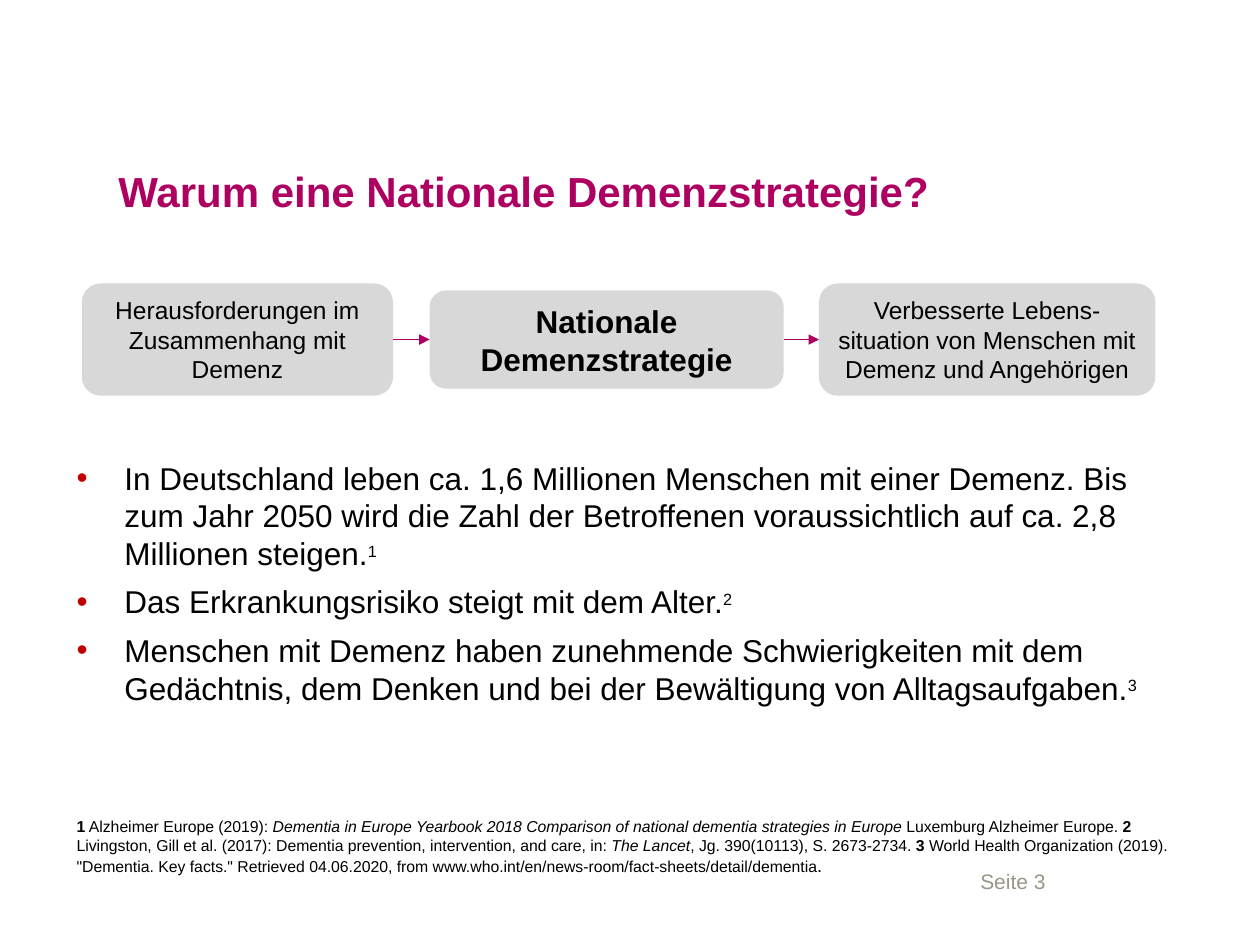
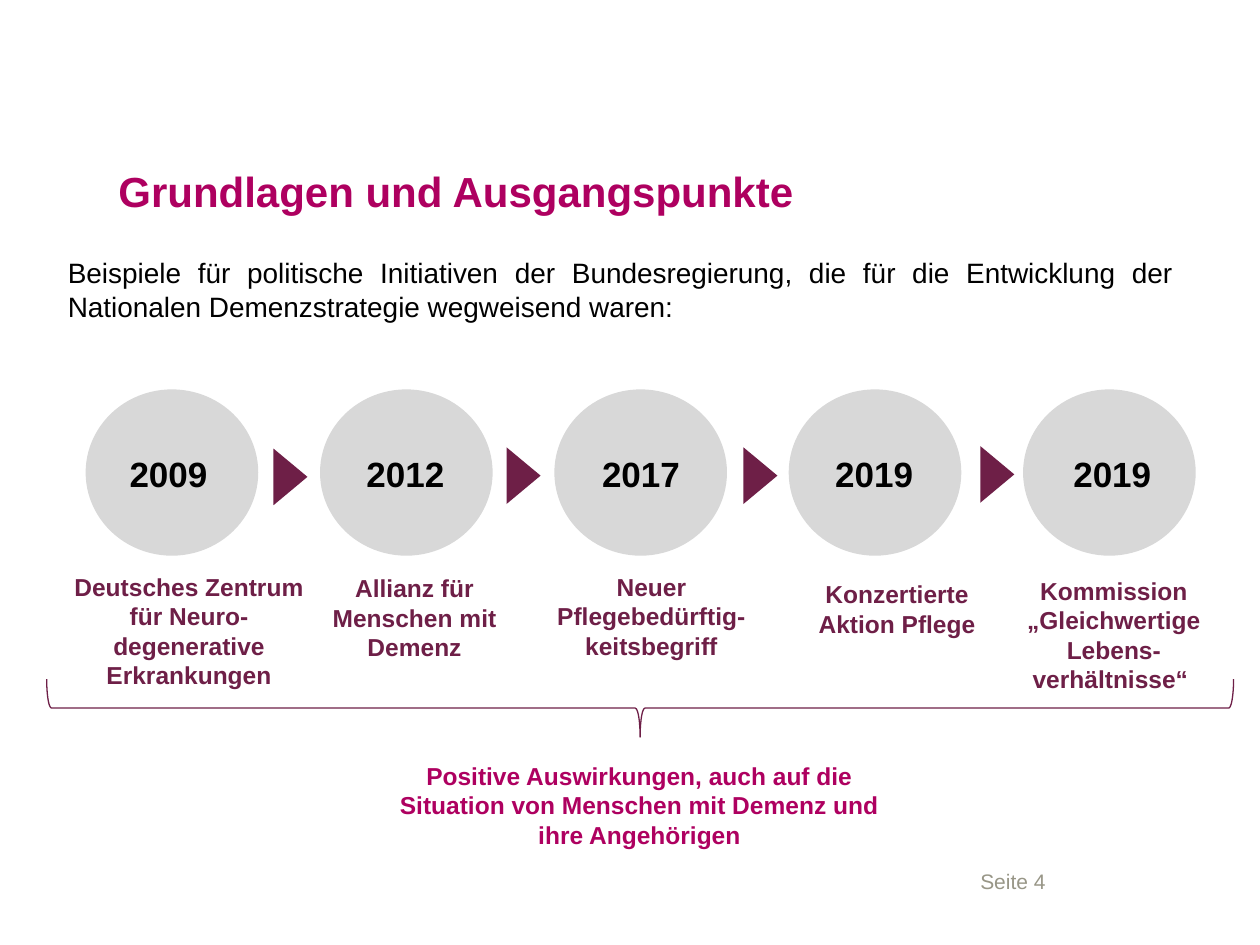
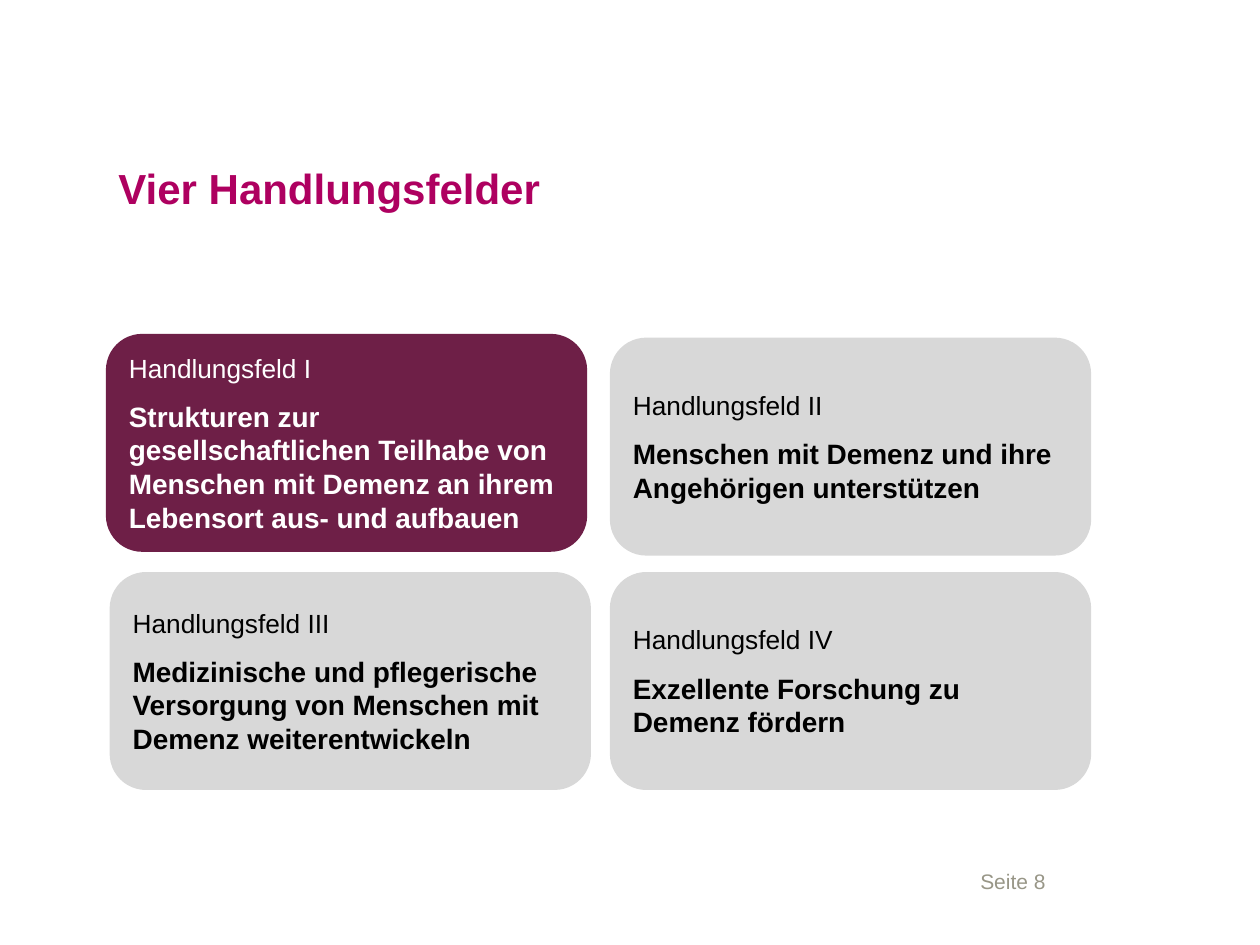
"""Builds three slides about the national dementia strategy."""
import itertools
from typing import NamedTuple

import lxml.etree
import pptx
import pptx.dml.color
import pptx.enum.shapes
import pptx.enum.text
import pptx.oxml.ns
import pptx.util

RGBColor = pptx.dml.color.RGBColor
Inches = pptx.util.Inches
Pt = pptx.util.Pt
ShapeType = pptx.enum.shapes.MSO_SHAPE
Align = pptx.enum.text.PP_ALIGN
Anchor = pptx.enum.text.MSO_ANCHOR

MAGENTA = RGBColor(0xAE, 0x00, 0x60)
PLUM = RGBColor(0x6E, 0x1F, 0x47)
GREY = RGBColor(0xD8, 0xD8, 0xD8)
FOOTER_GREY = RGBColor(0x98, 0x96, 0x87)
RED = RGBColor(0xC0, 0x00, 0x00)
BLACK = RGBColor(0x00, 0x00, 0x00)
WHITE = RGBColor(0xFF, 0xFF, 0xFF)
FONT = "Arial"


class Box(NamedTuple):
    """Position and size in inches."""
    left: float
    top: float
    width: float
    height: float

    def lengths(self):
        """Return the four values as lengths."""
        return [Inches(value) for value in self]


TITLE_BOX = Box(0.94, 1.18, 8.34, 0.96)
FOOTER_BOX = Box(7.78, 6.84, 1.51, 0.31)

STRATEGY_STEPS = [
    ("Herausforderungen im Zusammenhang mit Demenz", 0, 2.47, 0.89, 14, False),
    ("Nationale Demenzstrategie", 2.76, 2.81, 0.78, 18, True),
    ("Verbesserte Lebens-situation von Menschen mit Demenz und Angehörigen",
     5.85, 2.67, 0.89, 14, False),
]
REASONS = [
    "In Deutschland leben ca. 1,6 Millionen Menschen mit einer Demenz. Bis zum Jahr 2050 "
    "wird die Zahl der Betroffenen voraussichtlich auf ca. 2,8 Millionen steigen.",
    "Das Erkrankungsrisiko steigt mit dem Alter.",
    "Menschen mit Demenz haben zunehmende Schwierigkeiten mit dem Gedächtnis, dem Denken "
    "und bei der Bewältigung von Alltagsaufgaben.",
]
REFERENCES = [
    ("1", "bold"),
    (" Alzheimer Europe (2019): ", ""),
    ("Dementia in Europe Yearbook 2018 Comparison of national dementia strategies in Europe ",
     "italic"),
    ("Luxemburg Alzheimer Europe. ", ""),
    ("2", "bold"),
    (" Livingston, Gill et al. (2017): Dementia prevention, intervention, and care, in: ", ""),
    ("The Lancet", "italic"),
    (", Jg. 390(10113), S. 2673-2734. ", ""),
    ("3", "bold"),
    (' World Health Organization (2019). "Dementia. Key facts." Retrieved 04.06.2020, '
     "from www.who.int/en/news-room/fact-sheets/detail/dementia", ""),
]
INITIATIVES = [
    ("2009", 0.25, "Deutsches Zentrum für Neuro-degenerative Erkrankungen",
     Box(-0.19, 1.4, 2.02, 1.04)),
    ("2012", 0.27, "Allianz für Menschen mit Demenz", Box(-0.09, 1.41, 1.68, 0.81)),
    ("2017", 0.28, "Neuer Pflegebedürftig-keitsbegriff", Box(-0.22, 1.4, 1.98, 0.81)),
    ("2019", 0.27, "Konzertierte Aktion Pflege", Box(-0.12, 1.46, 1.96, 0.57)),
    ("2019", 0.3, "Kommission „Gleichwertige Lebens-verhältnisse“ ",
     Box(-0.34, 1.43, 2.12, 1.04)),
]
ARROW_OFFSETS = [(1.4, 0.56), (3.25, 0.55), (5.13, 0.55), (7.01, 0.54)]
FIELDS = [
    ("Handlungsfeld I", "Strukturen zur gesellschaftlichen Teilhabe von Menschen mit Demenz "
     "an ihrem Lebensort aus- und aufbauen", 0, 0),
    ("Handlungsfeld II", "Menschen mit Demenz und ihre Angehörigen unterstützen", 4, 0.03),
    ("Handlungsfeld III", "Medizinische und pflegerische Versorgung von Menschen mit Demenz "
     "weiterentwickeln", 0.03, 1.89),
    ("Handlungsfeld IV", "Exzellente Forschung zu Demenz fördern", 4, 1.89),
]


def style_run(run, size, color=BLACK, bold=False, italic=False):
    """Set the font of a run."""
    run.font.name = FONT
    run.font.size = Pt(size)
    run.font.color.rgb = color
    run.font.bold = bold
    run.font.italic = italic


def add_run(paragraph, text, size, **style):
    """Append a formatted run."""
    run = paragraph.add_run()
    run.text = text
    style_run(run, size, **style)
    return run


def write(shape, text, size, align=Align.LEFT, **style):
    """Fill a shape with one formatted paragraph."""
    shape.text_frame.text = text
    paragraph = shape.text_frame.paragraphs[0]
    paragraph.alignment = align
    style_run(paragraph.runs[0], size, **style)
    return paragraph


def add_text_frame(slide, box):
    """Add an empty wrapping text box."""
    shape = slide.shapes.add_textbox(*box.lengths())
    shape.text_frame.word_wrap = True
    return shape


def add_text(slide, box, text, size, **style):
    """Add a text box with one paragraph."""
    shape = add_text_frame(slide, box)
    write(shape, text, size, **style)
    return shape


def add_block(slide, kind, box, fill=None, rotation=0):
    """Add a preset shape without outline or shadow."""
    shape = slide.shapes.add_shape(kind, *box.lengths())
    shape.shadow.inherit = False
    shape.rotation = rotation
    shape.line.fill.background()
    if fill is None:
        shape.fill.background()
    else:
        shape.fill.solid()
        shape.fill.fore_color.rgb = fill
    shape.text_frame.word_wrap = True
    shape.text_frame.vertical_anchor = Anchor.MIDDLE
    return shape


def add_child(parent, tag, **attributes):
    """Append a drawing element."""
    return lxml.etree.SubElement(parent, pptx.oxml.ns.qn(tag), attributes)


def add_arrow(slide, start, end, y):
    """Draw a horizontal arrow."""
    connector = slide.shapes.add_connector(
        pptx.enum.shapes.MSO_CONNECTOR.STRAIGHT,
        Inches(start), Inches(y), Inches(end), Inches(y))
    connector.line.color.rgb = MAGENTA
    connector.line.width = Pt(0.75)
    properties = connector._element.spPr
    add_child(properties.get_or_add_ln(), "a:tailEnd", type="triangle")
    add_child(properties, "a:effectLst")


def add_bullet(paragraph):
    """Give a paragraph a red bullet and a hanging indent."""
    properties = paragraph._p.get_or_add_pPr()
    properties.set("marL", str(Inches(0.38)))
    properties.set("indent", str(Inches(-0.38)))
    add_child(add_child(properties, "a:buClr"), "a:srgbClr", val=str(RED))
    add_child(properties, "a:buFont", typeface=FONT)
    add_child(properties, "a:buChar", char="•")


def add_page(presentation, title, number, title_box=TITLE_BOX):
    """Add a slide with title and page number."""
    slide = presentation.slides.add_slide(presentation.slide_layouts[6])
    heading = add_text(slide, title_box, title, 24, color=MAGENTA, bold=True)
    frame = heading.text_frame
    frame.margin_left = frame.margin_top = frame.margin_right = frame.margin_bottom = 0
    frame.paragraphs[0].line_spacing = 1.33
    footer = add_text(slide, FOOTER_BOX, f"Seite {number}", 12, color=FOOTER_GREY)
    footer.text_frame.margin_left = 0
    return slide


def add_strategy_flow(slide, box):
    """Draw the strategy steps joined by arrows."""
    middle = box.top + box.height / 2
    for text, offset, width, height, size, bold in STRATEGY_STEPS:
        step_box = Box(box.left + offset, middle - height / 2, width, height)
        step = add_block(slide, ShapeType.ROUNDED_RECTANGLE, step_box, GREY)
        write(step, text, size, align=Align.CENTER, bold=bold)
    for before, after in itertools.pairwise(STRATEGY_STEPS):
        add_arrow(slide, box.left + before[1] + before[2], box.left + after[1], middle)


def add_reasons(slide, box):
    """List the reasons with numbered reference marks."""
    frame = add_text_frame(slide, box).text_frame
    for number, reason in enumerate(REASONS, 1):
        paragraph = frame.paragraphs[0] if number == 1 else frame.add_paragraph()
        if number > 1:
            paragraph.space_before = Pt(6)
        add_bullet(paragraph)
        add_run(paragraph, reason, 18)
        mark = add_run(paragraph, str(number), 16)
        mark._r.get_or_add_rPr().set("baseline", "30000")


def add_references(slide, box):
    """Write the reference list."""
    paragraph = add_text_frame(slide, box).text_frame.paragraphs[0]
    for text, style in REFERENCES:
        add_run(paragraph, text, 9, bold=style == "bold", italic=style == "italic")
    add_run(paragraph, ".", 10.5)


def add_timeline(slide, box):
    """Draw the initiatives as circles with years, labels and arrowheads."""
    diameter = 1.37
    pitch = (box.width - diameter) / (len(INITIATIVES) - 1)
    for index, (year, year_offset, label, label_box) in enumerate(INITIATIVES):
        left = box.left + index * pitch
        add_block(slide, ShapeType.OVAL, Box(left, box.top, diameter, box.height), GREY)
        add_text(slide, Box(left + year_offset, box.top + 0.45, 1.04, 0.44), year, 20, bold=True)
        place = label_box._replace(left=left + label_box.left, top=box.top + label_box.top)
        add_text(slide, place, label, 14, align=Align.CENTER, color=PLUM, bold=True)
    for left, top in ARROW_OFFSETS:
        add_block(slide, ShapeType.ISOSCELES_TRIANGLE,
                  Box(box.left + left, box.top + top, 0.45, 0.27), PLUM, 90)


def add_conclusion(slide, box):
    """Draw the brace across the box and the conclusion below it."""
    depth = 0.46
    center = box.left + box.width / 2
    brace = add_block(
        slide, ShapeType.RIGHT_BRACE,
        Box(center - depth / 2, box.top + depth / 2 - box.width / 2, depth, box.width),
        rotation=90)
    brace.line.color.rgb = PLUM
    brace.line.width = Pt(0.75)
    add_text(slide, Box(center - 2.1, box.top + 0.6, 4.19, 0.81),
             "Positive Auswirkungen, auch auf die Situation von Menschen mit Demenz "
             "und ihre Angehörigen", 14, align=Align.CENTER, color=MAGENTA, bold=True)


def add_fields(slide, box):
    """Draw the fields of action, the first one highlighted."""
    for index, (name, goal, left, top) in enumerate(FIELDS):
        fill, color = (PLUM, WHITE) if index == 0 else (GREY, BLACK)
        card = add_block(slide, ShapeType.ROUNDED_RECTANGLE,
                         Box(box.left + left, box.top + top, 3.82, 1.73), fill)
        write(card, name, 15, color=color)
        paragraph = card.text_frame.add_paragraph()
        paragraph.alignment = Align.LEFT
        paragraph.space_before = Pt(9)
        add_run(paragraph, goal, 16, color=color, bold=True)


def build_reasons_slide(presentation):
    """Build the slide on why a strategy is needed."""
    slide = add_page(presentation, "Warum eine Nationale Demenzstrategie?", 3)
    add_strategy_flow(slide, Box(0.65, 2.25, 8.52, 0.89))
    add_reasons(slide, Box(0.51, 3.59, 8.9, 2.09))
    add_references(slide, Box(0.51, 6.43, 8.9, 0.59))


def build_initiatives_slide(presentation):
    """Build the slide on earlier initiatives."""
    slide = add_page(presentation, "Grundlagen und Ausgangspunkte", 4)
    add_text(slide, Box(0.44, 1.98, 8.97, 0.64),
             "Beispiele für politische Initiativen der Bundesregierung, die für die Entwicklung "
             "der Nationalen Demenzstrategie wegweisend waren:", 16, align=Align.JUSTIFY)
    add_timeline(slide, Box(0.68, 3.09, 8.81, 1.32))
    add_conclusion(slide, Box(0.37, 5.39, 9.42, 1.41))


def build_fields_slide(presentation):
    """Build the slide on the fields of action."""
    slide = add_page(presentation, "Vier Handlungsfelder", 8, Box(0.94, 1.16, 8.62, 0.96))
    add_fields(slide, Box(0.84, 2.65, 7.82, 3.62))


def main():
    """Build and save the presentation."""
    presentation = pptx.Presentation()
    presentation.slide_width = Inches(10)
    presentation.slide_height = Inches(7.5)
    build_reasons_slide(presentation)
    build_initiatives_slide(presentation)
    build_fields_slide(presentation)
    presentation.save("out.pptx")


if __name__ == "__main__":
    main()
